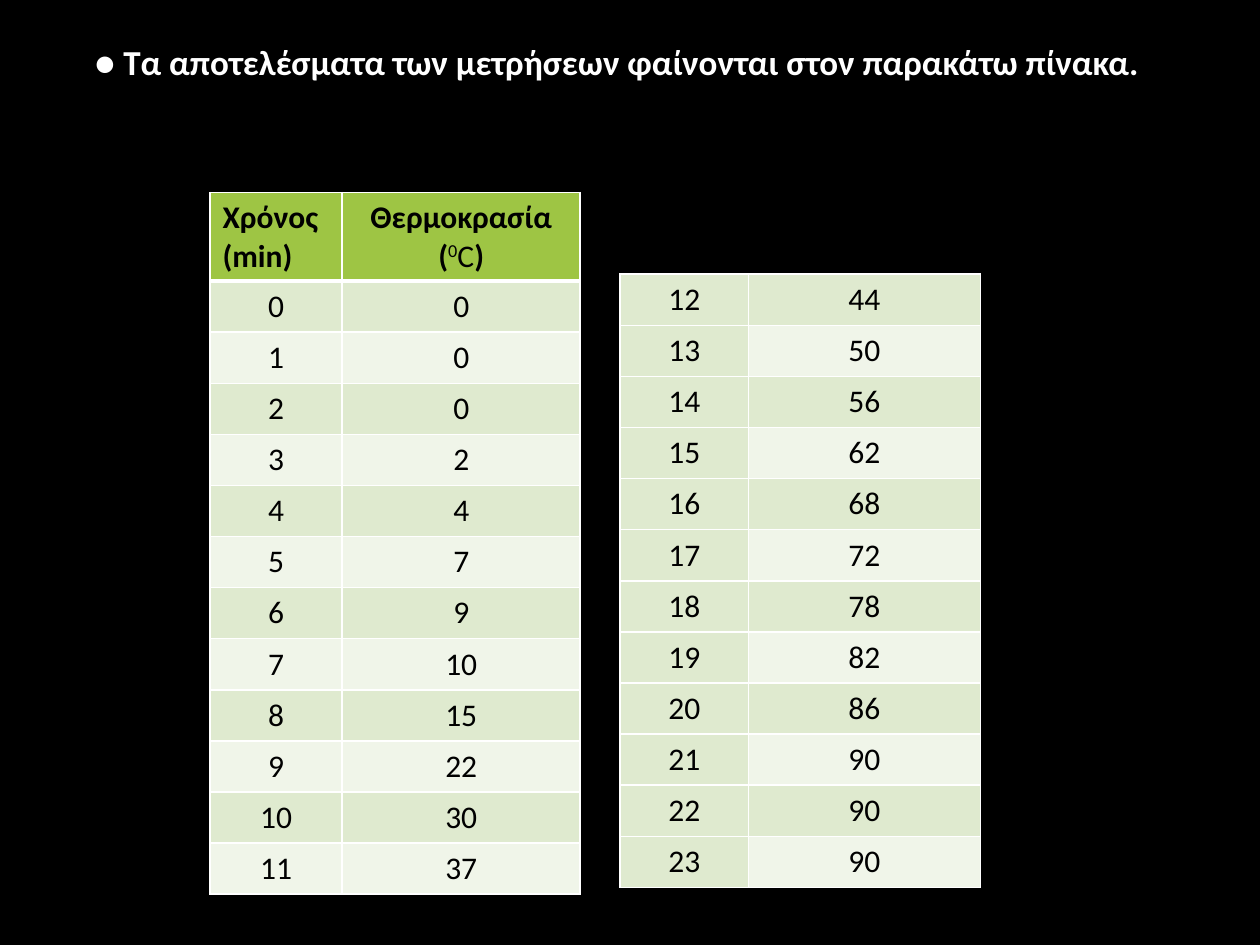
from lxml import etree
from pptx import Presentation
from pptx.dml.color import RGBColor
from pptx.enum.text import PP_ALIGN
from pptx.oxml.ns import qn
from pptx.util import Pt

CENTER = PP_ALIGN.CENTER
LEFT = PP_ALIGN.LEFT
FONT = "Calibri"
BLACK, WHITE = "000000", "FFFFFF"
HEADER_GREEN, BAND_DARK, BAND_LIGHT = "9EC544", "DFEACF", "F0F5E9"
ROW_HEIGHT, HEADER_HEIGHT = 29.2, 50.6

TITLE = "● Τα αποτελέσματα των μετρήσεων φαίνονται στον παρακάτω πίνακα."
TEMPERATURES = [0, 0, 0, 2, 4, 7, 9, 10, 15, 22, 30, 37,
                44, 50, 56, 62, 68, 72, 78, 82, 86, 90, 90, 90]
READINGS = list(enumerate(TEMPERATURES))


def color(hex_value):
    return RGBColor.from_string(hex_value)


def style_font(font, size, hex_value, bold=False):
    font.name = FONT
    font.size = Pt(size)
    font.bold = bold
    font.color.rgb = color(hex_value)


def add_title(page):
    box = page.shapes.add_textbox(Pt(36), Pt(15), Pt(648), Pt(499))
    box.text_frame.word_wrap = True
    para = box.text_frame.paragraphs[0]
    para.text = TITLE
    para.line_spacing = 1.2
    para._p.get_or_add_pPr().set("marL", str(Pt(10.8)))
    style_font(para.font, 20, WHITE, bold=True)


def style_cell(cell, fill, bottom_width=1):
    """Give the cell white borders and then its fill, in schema order."""
    properties = cell._tc.get_or_add_tcPr()
    for side in "LRTB":
        width = bottom_width if side == "B" else 1
        line = etree.SubElement(properties, qn(f"a:ln{side}"), w=str(Pt(width)))
        solid = etree.SubElement(line, qn("a:solidFill"))
        etree.SubElement(solid, qn("a:srgbClr"), val=WHITE)
    cell.fill.solid()
    cell.fill.fore_color.rgb = color(fill)


def write_cell(cell, text, align=CENTER, bold=False):
    cell.text = text
    for para in cell.text_frame.paragraphs:
        para.alignment = align
        style_font(para.font, 18, BLACK, bold)


def add_table(page, left, top, widths, row_count):
    heights = [ROW_HEIGHT] * row_count
    frame = page.shapes.add_table(row_count, len(widths), Pt(left), Pt(top),
                                  Pt(sum(widths)), Pt(sum(heights)))
    table = frame.table
    table.first_row = table.horz_banding = False
    for column, width in zip(table.columns, widths):
        column.width = Pt(width)
    for row, height in zip(table.rows, heights):
        row.height = Pt(height)
    return table


def fill_header(table):
    table.first_row = True
    table.rows[0].height = Pt(HEADER_HEIGHT)
    time_cell, temperature_cell = table.rows[0].cells
    write_cell(time_cell, "Χρόνος\n(min)", LEFT, bold=True)
    write_cell(temperature_cell, "Θερμοκρασία\n", bold=True)
    unit = temperature_cell.text_frame.paragraphs[1]
    for text, bold in (("(", True), ("0", False), ("C", False), (")", True)):
        span = unit.add_run()
        span.text = text
        style_font(span.font, 18, BLACK, bold)
        if text == "0":
            span._r.get_or_add_rPr().set("baseline", "30000")
    for cell in (time_cell, temperature_cell):
        style_cell(cell, HEADER_GREEN, bottom_width=3)


def fill_readings(table, readings, first_row=0, plain_time_column=False):
    for index, reading in enumerate(readings):
        band = BAND_LIGHT if index % 2 else BAND_DARK
        fills = (BAND_DARK if plain_time_column else band, band)
        cells = table.rows[first_row + index].cells
        for cell, value, fill in zip(cells, reading, fills):
            write_cell(cell, str(value))
            style_cell(cell, fill)


def main():
    deck = Presentation()
    deck.slide_width, deck.slide_height = Pt(720), Pt(540)
    page = deck.slides.add_slide(deck.slide_layouts[6])
    page.background.fill.solid()
    page.background.fill.fore_color.rgb = color(BLACK)

    add_title(page)
    early, late = READINGS[:12], READINGS[12:]
    early_table = add_table(page, 120, 110, (75.6, 136), len(early) + 1)
    fill_header(early_table)
    fill_readings(early_table, early, first_row=1)
    late_table = add_table(page, 354.3, 156.7, (73.5, 132.4), len(late))
    fill_readings(late_table, late, plain_time_column=True)
    deck.save("out.pptx")


if __name__ == "__main__":
    main()
